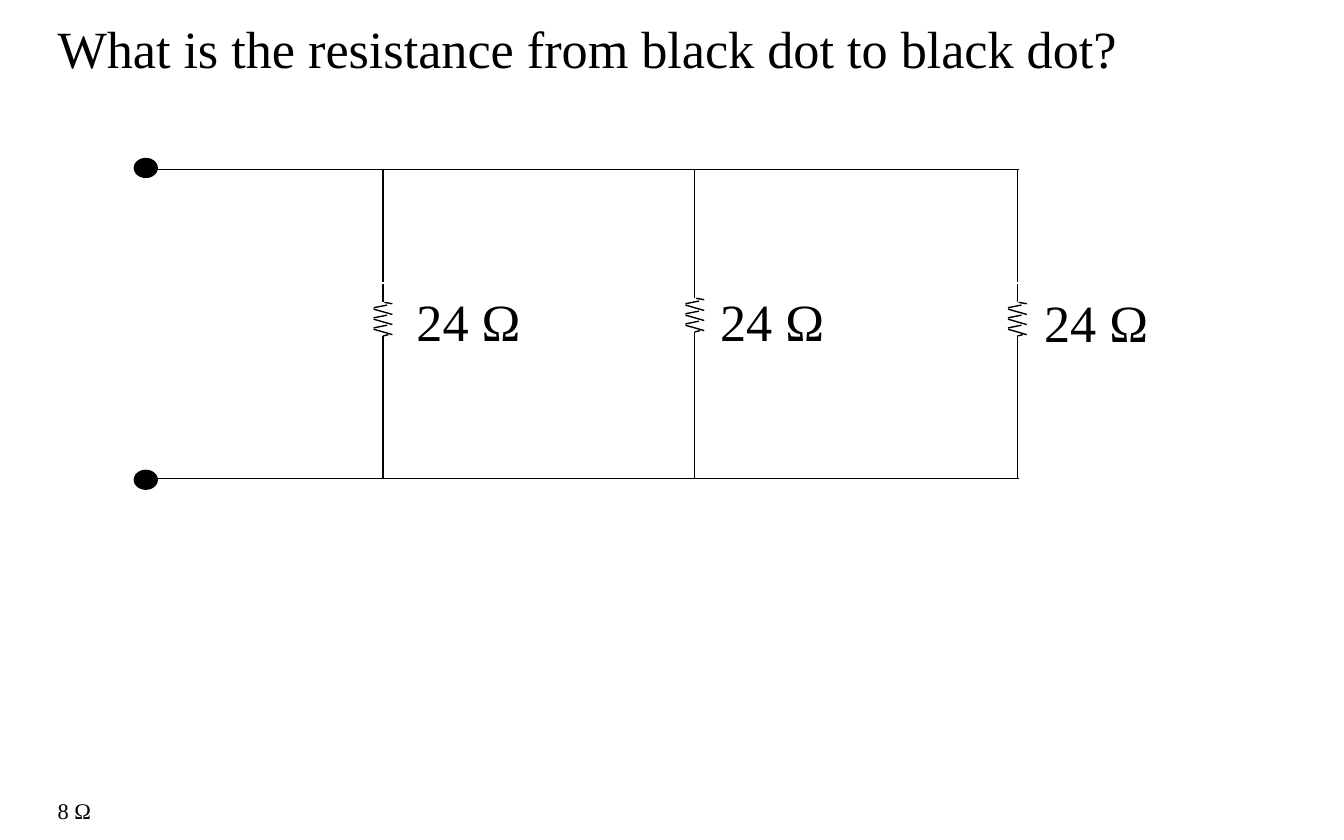
from lxml import etree
from pptx import Presentation
from pptx.dml.color import RGBColor
from pptx.enum.shapes import MSO_CONNECTOR, MSO_SHAPE
from pptx.enum.text import MSO_AUTO_SIZE
from pptx.oxml.ns import qn
from pptx.util import Inches, Pt

LINE, OVAL = MSO_CONNECTOR.STRAIGHT, MSO_SHAPE.OVAL
GROW = MSO_AUTO_SIZE.SHAPE_TO_FIT_TEXT

THEME = {"font": "Times New Roman", "ink": RGBColor(0, 0, 0),
         "large": Pt(28), "small": Pt(12), "line": Pt(0.75)}

QUESTION = "What is the resistance from black dot to black dot?"
ANSWER = "8 Ω"
# label, wire x, resistor top, label left, label top
BRANCHES = [
    ("24 Ω", 2.85, 2.11, 3.00, 2.10),
    ("24 Ω", 5.17, 2.08, 5.26, 2.10),
    ("24 Ω", 7.57, 2.11, 7.67, 2.11),
]
MARGIN = 0.33
RAIL_LEFT, RAIL_RIGHT = 1.08, 7.58
RAILS = (1.26, 3.56)
WIRE_GAP = (2.10, 2.58)
DOT_LEFT, DOT_TOPS, DOT_SIZE = 1.0, (1.18, 3.5), (0.17, 0.14)

# Resistor strokes, relative to its lead's x and its top
TEETH, PITCH = 3, 0.075
LEAD, BODY_END = 0.14, 0.39
LEFT, INNER, RIGHT = -0.07, 0.03, 0.07
STROKES = [(0, 0, 0, LEAD), (0.01, LEAD, RIGHT, 0.15)]
for tooth in range(TEETH):
    y = 0.16 + tooth * PITCH
    STROKES += [(INNER, y, LEFT, y + 0.02), (LEFT, y + 0.03, RIGHT, y + 0.07)]
STROKES += [(0.04, 0.38, 0, BODY_END), (0, BODY_END, 0, BODY_END + LEAD)]


def add_line(shapes, x1, y1, x2, y2):
    c = shapes.add_connector(LINE, *map(Inches, (x1, y1, x2, y2)))
    c.line.color.rgb = THEME["ink"]
    c.line.width = THEME["line"]
    etree.SubElement(c._element.spPr, qn("a:effectLst"))


def add_text(shapes, text, size, left, top, width, height, wrap=False):
    tf = shapes.add_textbox(*map(Inches, (left, top, width, height))).text_frame
    tf.word_wrap = wrap
    tf.auto_size = GROW
    r = tf.paragraphs[0].add_run()
    r.text = text
    r.font.name, r.font.size = THEME["font"], THEME[size]
    r.font.color.rgb = THEME["ink"]


def add_dot(shapes, top):
    sp = shapes.add_shape(OVAL, *map(Inches, (DOT_LEFT, top, *DOT_SIZE)))
    sp.shadow.inherit = False
    sp.fill.solid()
    sp.fill.fore_color.rgb = sp.line.color.rgb = THEME["ink"]
    sp.line.width = THEME["line"]


def add_resistor(shapes, x, top):
    group = shapes.add_group_shape()
    for x1, y1, x2, y2 in STROKES:
        add_line(group.shapes, x + x1, top + y1, x + x2, top + y2)


def main():
    prs = Presentation()
    prs.slide_width, prs.slide_height = Inches(10), Inches(6.25)
    s = prs.slides.add_slide(prs.slide_layouts[6])
    shapes = s.shapes

    add_text(shapes, QUESTION, "large", MARGIN, 0.07, 10 - 2 * MARGIN, 0.57, wrap=True)
    add_text(shapes, ANSWER, "small", MARGIN, 5.88, 0.46, 0.3)
    for y in RAILS:
        add_line(shapes, RAIL_LEFT, y, RAIL_RIGHT, y)
    for label, x, top, label_left, label_top in BRANCHES:
        add_resistor(shapes, x, top)
        for end, rail in zip(WIRE_GAP, RAILS):
            add_line(shapes, x, end, x, rail)
        add_text(shapes, label, "large", label_left, label_top, 0.99, 0.57)
    for top in DOT_TOPS:
        add_dot(shapes, top)
    prs.save("out.pptx")


if __name__ == "__main__":
    main()
